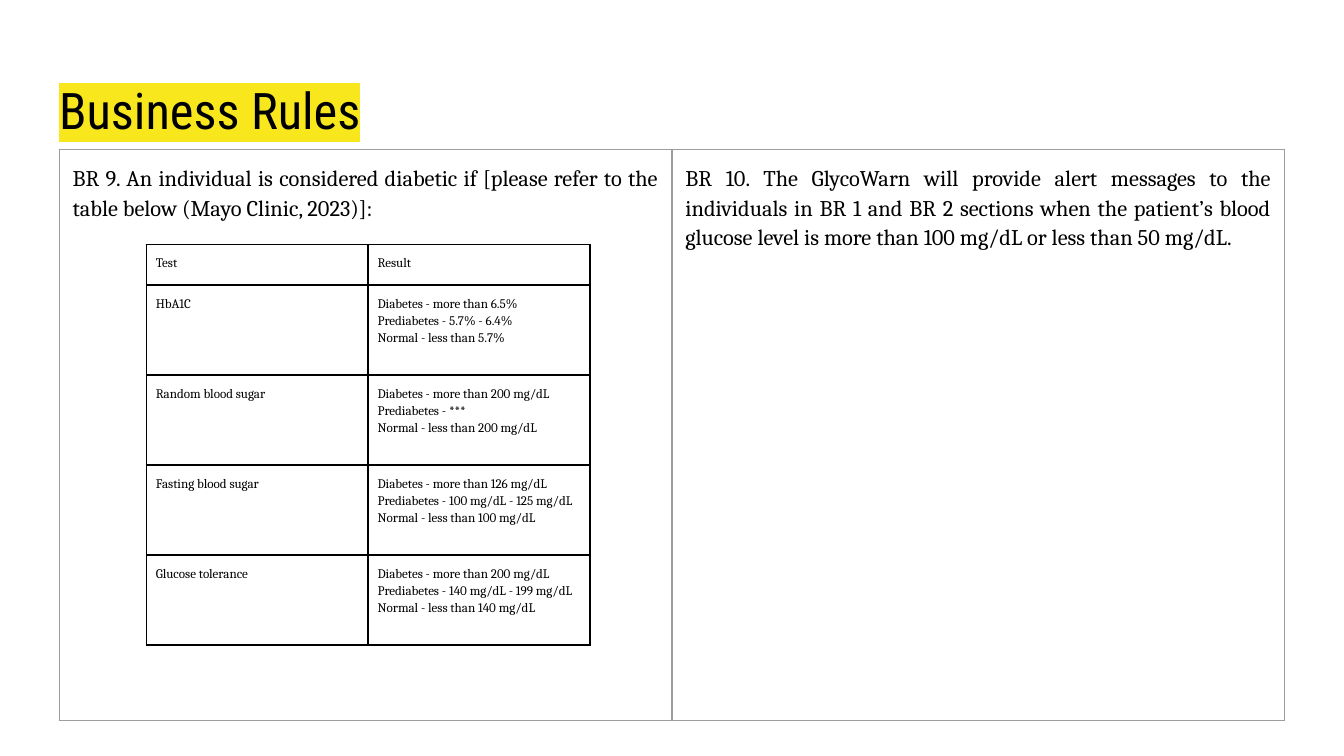
from lxml.etree import SubElement
from pptx import Presentation
from pptx.dml.color import RGBColor
from pptx.enum.text import MSO_ANCHOR, PP_ALIGN
from pptx.oxml.ns import qn
from pptx.util import Inches, Pt

TITLE = "Business Rules"
RULES = [[
    "BR 9. An individual is considered diabetic if [please refer to the table below (Mayo Clinic, 2023)]:",
    "BR 10. The GlycoWarn will provide alert messages to the individuals in BR 1 and BR 2 sections "
    "when the patient’s blood glucose level is more than 100 mg/dL or less than 50 mg/dL.",
]]
LEVELS = ["Diabetes - more than", "Prediabetes -", "Normal - less than"]
TESTS = [
    ("HbA1C", ["6.5%", "5.7% - 6.4%", "5.7%"]),
    ("Random blood sugar", ["200 mg/dL", "***", "200 mg/dL"]),
    ("Fasting blood sugar", ["126 mg/dL", "100 mg/dL - 125 mg/dL", "100 mg/dL"]),
    ("Glucose tolerance", ["200 mg/dL", "140 mg/dL - 199 mg/dL", "140 mg/dL"]),
]
RESULTS = [["Test", "Result"]] + [
    [test, "\n".join(f"{level} {value}" for level, value in zip(LEVELS, values))]
    for test, values in TESTS
]
RULES_FORMAT = dict(left=0.44, top=1.11, column=4.56, heights=[4.25],
                    inset=0.1, size=12, border="9E9E9E", weight=0.75)
RESULTS_FORMAT = dict(left=1.09, top=1.82, column=1.65, heights=[0.3] + [0.67] * len(TESTS),
                      inset=0.07, size=7, border="000000", weight=1)


def color(value):
    return RGBColor.from_string(value)


def apply(target, values):
    for name, value in values.items():
        setattr(target, name, value)


def style_font(font, family, size):
    apply(font, {"name": family, "size": Pt(size), "bold": False})
    font.color.rgb = color("000000")


def add_borders(cell, border, weight):
    properties = cell._tc.get_or_add_tcPr()
    for side in ("L", "R", "T", "B"):
        line = SubElement(properties, qn(f"a:ln{side}"), w=str(Pt(weight)))
        fill = SubElement(line, qn("a:solidFill"))
        SubElement(fill, qn("a:srgbClr"), val=border)


def add_grid(slide, rows, left, top, column, heights, inset, size, border, weight):
    columns = len(rows[0])
    table = slide.shapes.add_table(
        len(rows), columns, Inches(left), Inches(top),
        Inches(column * columns), Inches(sum(heights))).table
    apply(table, {"first_row": False, "horz_banding": False})
    for table_column in table.columns:
        table_column.width = Inches(column)
    for row, height, texts in zip(table.rows, heights, rows):
        row.height = Inches(height)
        for cell, text in zip(row.cells, texts):
            add_borders(cell, border, weight)
            cell.fill.background()
            apply(cell, {f"margin_{side}": Inches(inset)
                         for side in ("left", "right", "top", "bottom")})
            cell.text = text
            for paragraph in cell.text_frame.paragraphs:
                apply(paragraph, {"alignment": PP_ALIGN.JUSTIFY, "line_spacing": 1.15})
                style_font(paragraph.runs[0].font, "Cambria", size)


def add_title(slide):
    title = slide.shapes.title
    apply(title, {"left": Inches(0.34), "top": Inches(0.49),
                  "width": Inches(9.32), "height": Inches(0.63)})
    frame = title.text_frame
    frame.text = TITLE
    apply(frame, {f"margin_{side}": Inches(0.1)
                  for side in ("left", "right", "top", "bottom")})
    apply(frame, {"vertical_anchor": MSO_ANCHOR.TOP, "word_wrap": True})
    frame.paragraphs[0].alignment = PP_ALIGN.LEFT
    run = frame.paragraphs[0].runs[0]
    style_font(run.font, "Roboto Condensed", 27)
    properties = run._r.get_or_add_rPr()
    highlight = SubElement(properties, qn("a:highlight"))
    SubElement(highlight, qn("a:srgbClr"), val="F8E71C")
    properties.find(qn("a:latin")).addprevious(highlight)


def main():
    presentation = Presentation()
    apply(presentation, {"slide_width": Inches(10), "slide_height": Inches(10 * 9 / 16)})
    slide = presentation.slides.add_slide(presentation.slide_layouts[5])
    slide.background.fill.solid()
    slide.background.fill.fore_color.rgb = color("FFFFFF")
    add_title(slide)
    add_grid(slide, RULES, **RULES_FORMAT)
    add_grid(slide, RESULTS, **RESULTS_FORMAT)
    presentation.save("out.pptx")


if __name__ == "__main__":
    main()
